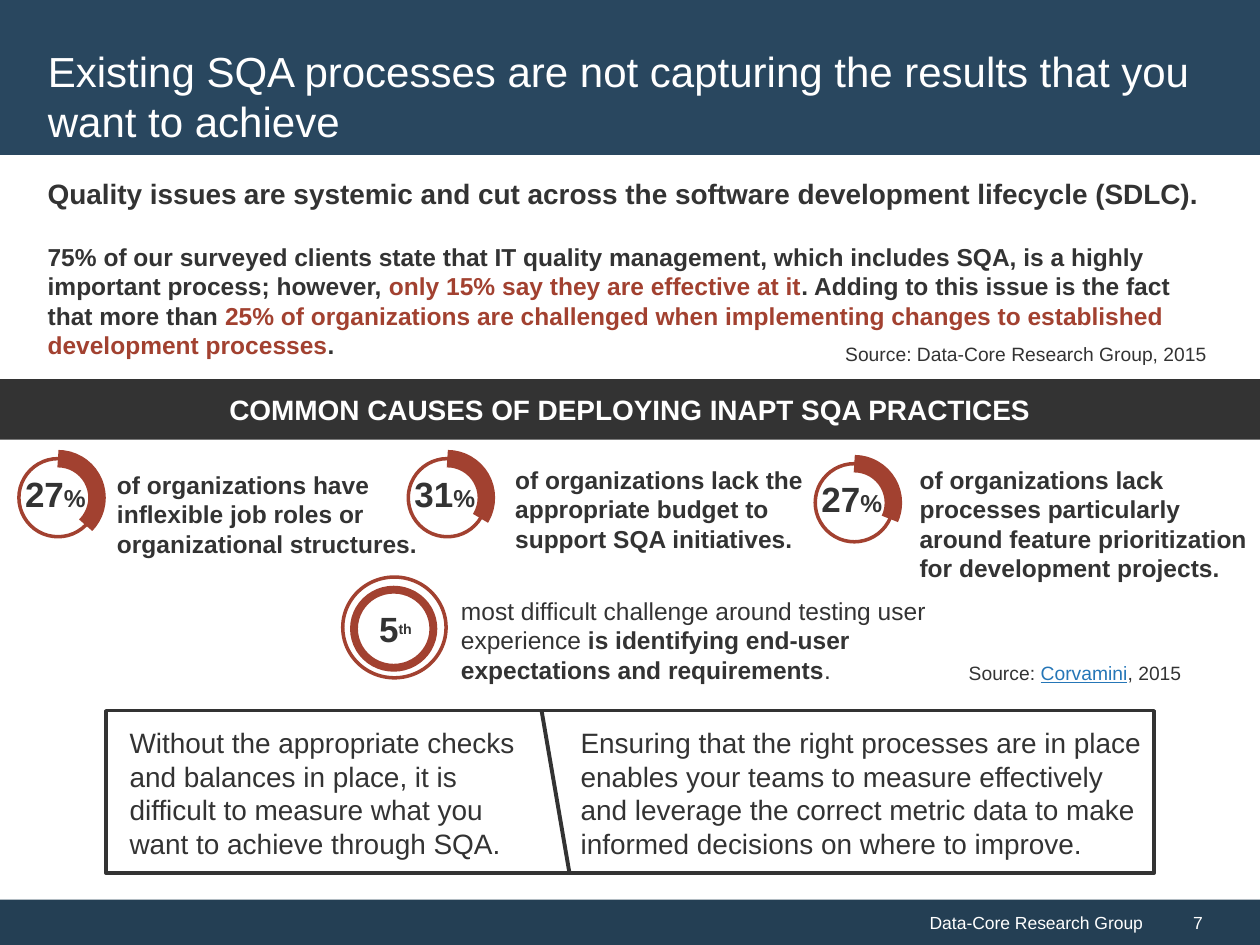
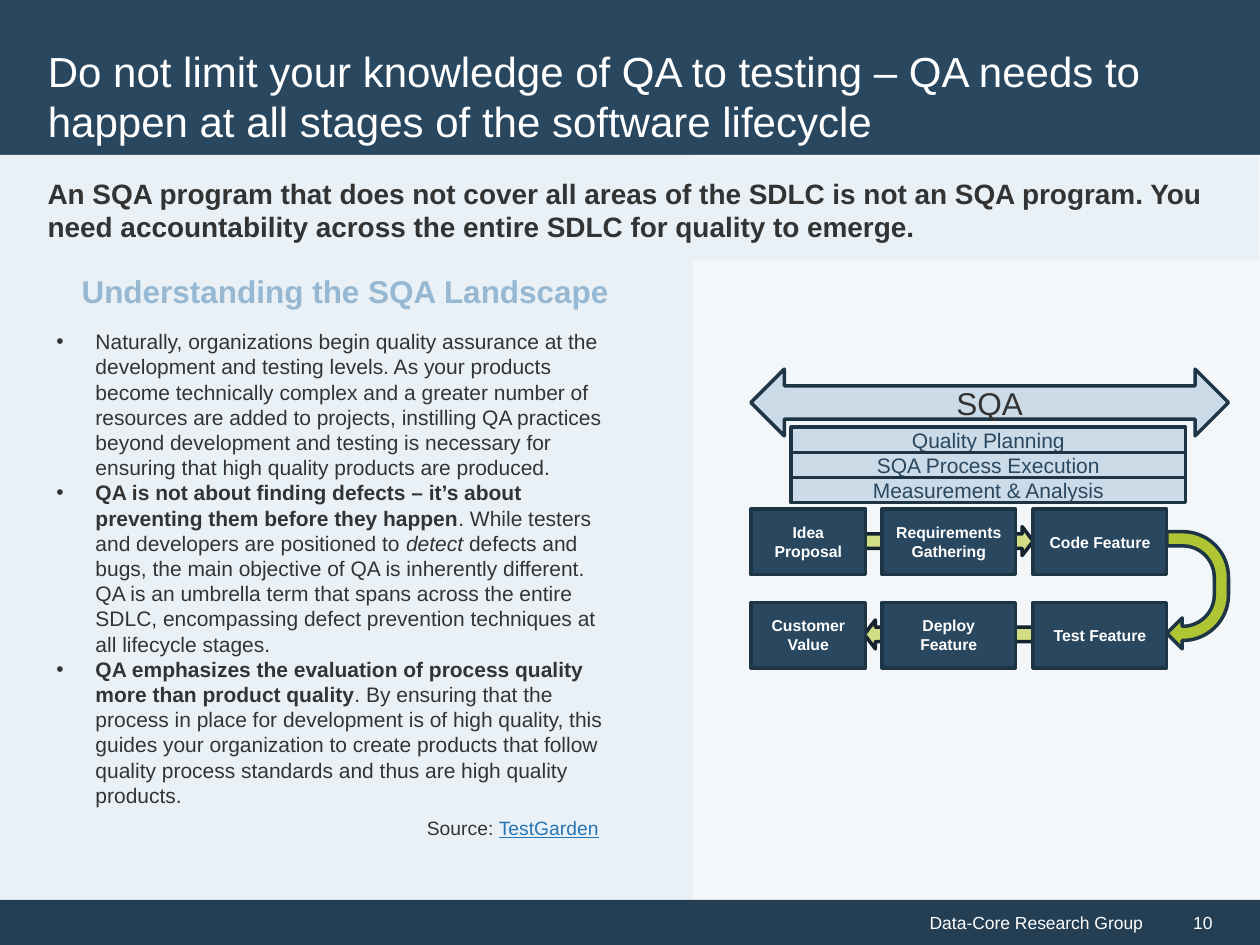
from lxml import etree
from pptx import Presentation
from pptx.dml.color import RGBColor
from pptx.enum.shapes import MSO_CONNECTOR, MSO_SHAPE
from pptx.enum.text import MSO_ANCHOR, MSO_AUTO_SIZE, PP_ALIGN
from pptx.oxml.ns import qn
from pptx.util import Inches, Pt

RECTANGLE = MSO_SHAPE.RECTANGLE
OVAL = MSO_SHAPE.OVAL
ARC = MSO_SHAPE.ARC
PROCESS = MSO_SHAPE.FLOWCHART_PROCESS
RIGHT_ARROW = MSO_SHAPE.RIGHT_ARROW
SPAN_ARROW = MSO_SHAPE.LEFT_RIGHT_ARROW
U_TURN_ARROW = MSO_SHAPE.U_TURN_ARROW
STRAIGHT = MSO_CONNECTOR.STRAIGHT
TOP, MIDDLE = MSO_ANCHOR.TOP, MSO_ANCHOR.MIDDLE
LEFT, CENTER, RIGHT = PP_ALIGN.LEFT, PP_ALIGN.CENTER, PP_ALIGN.RIGHT

WIDTH, HEIGHT = Inches(10), Inches(7.5)
COLUMN, ROW = WIDTH / 100, HEIGHT / 75
FONT = "Arial"
PUBLISHER = "Data-Core Research Group"
COLORS = {
    "white": "FFFFFF", "text": "333333", "band": "29475F", "footer": "243F54",
    "accent": "A24130", "link": "2576B7", "heading": "96B8D2",
    "panel": "F4F7FA", "pale": "EAF1F6", "layer": "CBDBE8", "edge": "1E3546",
    "arrow": "D1DE83", "arrow edge": "15232F", "turn": "B0C534",
}
BOLD, PLAIN, ITALIC = {"bold": True}, {}, {"italic": True}
ACCENT = {"bold": True, "color": "accent"}
LINK = {"color": "link", "underline": True}


def color(name):
    return RGBColor.from_string(COLORS[name])


def place(left, top, width, height):
    return [round(value) for value in
            (left * COLUMN, top * ROW, width * COLUMN, height * ROW)]


def format_span(span, size, ink, style):
    font = span.font
    font.name = FONT
    font.size = Pt(style.get("size", size))
    font.bold = style.get("bold", False)
    font.italic = style.get("italic", False)
    font.underline = style.get("underline", False)
    font.color.rgb = color(style.get("color", ink))
    if "raised" in style:
        span._r.get_or_add_rPr().set("baseline", str(style["raised"] * 1000))


def write(box, paragraphs, size, ink="text", align=LEFT, anchor=TOP):
    frame = box.text_frame
    frame.word_wrap = True
    frame.auto_size = MSO_AUTO_SIZE.NONE
    frame.vertical_anchor = anchor
    for number, spans in enumerate(paragraphs):
        para = frame.add_paragraph() if number else frame.paragraphs[0]
        para.alignment = align
        for text, style in spans:
            span = para.add_run()
            span.text = text
            format_span(span, size, ink, style)
    return box


def add_text(page, at, spans, size, **options):
    return write(page.shapes.add_textbox(*place(*at)), [spans], size, **options)


def add_bullets(page, at, paragraphs, size):
    box = write(page.shapes.add_textbox(*place(*at)), paragraphs, size)
    for para in box.text_frame.paragraphs:
        settings = para._p.get_or_add_pPr()
        settings.set("marL", str(Inches(0.31)))
        settings.set("indent", str(-Inches(0.31)))
        etree.SubElement(settings, qn("a:buFont")).set("typeface", FONT)
        etree.SubElement(settings, qn("a:buChar")).set("char", "•")


def add_shape(page, kind, at, fill=None, line=None, weight=2, turn=0, adjust=()):
    shape = page.shapes.add_shape(kind, *place(*at))
    shape.shadow.inherit = False
    shape.rotation = turn
    for number, value in enumerate(adjust):
        shape.adjustments[number] = value
    if fill:
        shape.fill.solid()
        shape.fill.fore_color.rgb = color(fill)
    else:
        shape.fill.background()
    if line:
        shape.line.color.rgb = color(line)
        shape.line.width = Pt(weight)
    else:
        shape.line.fill.background()
    return shape


def add_label(page, kind, at, text, size, ink, style=PLAIN, align=CENTER, **look):
    shape = add_shape(page, kind, at, **look)
    return write(shape, [[(text, style)]], size, ink, align, MIDDLE)


def add_divider(page, start, end):
    left, top, right, bottom = place(*start, *end)
    connector = page.shapes.add_connector(STRAIGHT, left, top, right, bottom)
    connector.line.color.rgb = color("text")
    connector.line.width = Pt(2.25)
    etree.SubElement(connector._element.spPr, qn("a:effectLst"))


def add_layout_bands(layout, page):
    header = add_shape(page, RECTANGLE, (0, 0, 100, 12.3), "band")
    footer = add_label(page, RECTANGLE, (0, 71.4, 100, 3.7), PUBLISHER, 10, "white",
                       align=RIGHT, fill="footer")
    footer.text_frame.margin_right = Inches(0.93)
    for position, band in enumerate((header, footer), 2):
        layout.shapes.element.insert(position, band.element)


def add_page(deck, title, number):
    layout = deck.slide_layouts[5]
    page = deck.slides.add_slide(layout)
    if len(deck.slides) == 1:
        add_layout_bands(layout, page)
    heading = page.shapes.title
    heading.left, heading.top, heading.width, heading.height = place(2.8, 2.8, 94.3, 9.6)
    write(heading, [[(title, PLAIN)]], 24, "white", anchor=MIDDLE)
    folio = add_text(page, (91.7, 71.4, 8.3, 3.7), [(str(number), PLAIN)], 10,
                     ink="white", anchor=MIDDLE)
    folio.text_frame.margin_left = Inches(0.3)
    return page


def add_share_ring(page, left, top, share, arc_end):
    add_text(page, (left - 0.5, top + 0.6, 8.1, 4.4),
             [(share, BOLD), ("%", {"bold": True, "size": 14})], 20)
    ring = (left, top, 6.2, 6.2)
    add_shape(page, OVAL, ring, line="accent")
    add_shape(page, ARC, ring, line="accent", weight=10, adjust=(162, arc_end))


def add_rank_ring(page):
    add_text(page, (29.1, 47.7, 4.8, 4.4),
             [("5", BOLD), ("th", {"bold": True, "size": 14, "raised": 30})], 20)
    add_shape(page, OVAL, (28.1, 46.8, 6.3, 6.2), line="accent", weight=4.5)
    add_shape(page, OVAL, (27.2, 45.8, 8.2, 8), line="accent")


def build_causes(deck):
    page = add_page(deck, "Existing SQA processes are not capturing the results "
                    "that you want to achieve", 7)
    add_text(page, (2.8, 13.5, 94.3, 3.7), [
        ("Quality issues", BOLD), (" ", {"bold": True, "size": 14}),
        ("are systemic and cut across the software development lifecycle (SDLC).", BOLD),
    ], 16)
    add_text(page, (2.8, 18.7, 94.3, 10.4), [
        ("75% of our surveyed clients state that IT quality management, which includes "
         "SQA, is a highly important process; however, ", BOLD),
        ("only 15% say they are effective at it", ACCENT),
        (". Adding to this issue is the fact that more than ", BOLD),
        ("25% of organizations are challenged when implementing changes to "
         "established development processes", ACCENT),
        (".", BOLD),
    ], 14)
    add_text(page, (66.1, 26.7, 33, 3), [(f"Source: {PUBLISHER}, 2015", PLAIN)], 11)
    add_label(page, RECTANGLE, (0, 30.1, 100, 4.8),
              "COMMON CAUSES OF DEPLOYING INAPT SQA PRACTICES", 16, "white", BOLD,
              fill="text")

    causes = [
        ((1.5, 36.4), "27", 26.86, (8.3, 36.8, 25.9, 8.1),
         "of organizations have inflexible job roles or organizational structures."),
        ((32.4, 36.4), "31", 19.09, (39.9, 36.4, 25.9, 8.1),
         "of organizations lack the appropriate budget to support SQA initiatives."),
        ((64.7, 36.8), "27", 14.64, (72, 36.4, 28.1, 10.4),
         "of organizations lack processes particularly around feature "
         "prioritization for development projects."),
    ]
    for corner, share, arc_end, caption_at, caption in causes:
        add_share_ring(page, *corner, share, arc_end)
        add_text(page, caption_at, [(caption, BOLD)], 14)

    add_rank_ring(page)
    add_text(page, (35.6, 46.8, 41.1, 8.1), [
        ("most difficult challenge around testing user experience ", PLAIN),
        ("is identifying end-user expectations and requirements", BOLD), (".", PLAIN),
    ], 14)
    add_text(page, (75.9, 52, 19.7, 2.8),
             [("Source: ", PLAIN), ("Corvamini", LINK), (", 2015", PLAIN)], 11)

    add_shape(page, RECTANGLE, (8.4, 56.4, 83.2, 12.9), line="text")
    add_divider(page, (43, 56.5), (45.2, 69.3))
    add_text(page, (9.3, 57.1, 34.8, 11.8), [
        ("Without the appropriate checks and balances in place, it is difficult to "
         "measure what you want to achieve through SQA.", PLAIN)], 16)
    add_text(page, (45.1, 57.1, 46.9, 11.8), [
        ("Ensuring that the right processes are in place enables your teams to measure "
         "effectively and leverage the correct metric data to make informed decisions "
         "on where to improve.", PLAIN)], 16)


def add_lifecycle(page):
    columns = [(59.6, 9.1), (70, 10.6), (82, 10.6)]
    rows = [
        (40.4, 0, ["Idea Proposal", "Requirements Gathering", "Code Feature"]),
        (47.8, 180, ["Customer Value", "Deploy Feature", "Test Feature"]),
    ]
    for top, turn, steps in rows:
        add_shape(page, RIGHT_ARROW, (68.6, top + 1.4, 13.4, 2.3), "arrow",
                  "arrow edge", turn=turn, adjust=(0.5, 0.38))
        for (left, width), step in zip(columns, steps):
            add_label(page, RECTANGLE, (left, top, width, 5.2), step, 9, "white",
                      BOLD, fill="band", line="edge")
    add_shape(page, U_TURN_ARROW, (90.4, 44.4, 9.3, 4.9), "turn", "edge", turn=90,
              adjust=(0.23, 0.25, 0.25, 0.74, 1))


def build_landscape(deck):
    page = add_page(deck, "Do not limit your knowledge of QA to testing – QA needs to "
                    "happen at all stages of the software lifecycle", 10)
    add_shape(page, RECTANGLE, (55, 12.3, 45, 59.1), "panel")
    add_shape(page, RECTANGLE, (0, 12.3, 55, 59.1), "pale")
    add_shape(page, RECTANGLE, (0, 12.4, 99.9, 8.2), "pale")
    add_text(page, (2.8, 13.5, 94.3, 6.4), [
        ("An SQA program that does not cover all areas of the SDLC is not an SQA "
         "program. You need accountability across the entire SDLC for quality to "
         "emerge.", BOLD)], 16)
    add_text(page, (2.8, 21.1, 49.2, 4), [("Understanding the SQA Landscape", BOLD)], 18,
             ink="heading", align=CENTER)
    add_bullets(page, (3.5, 25.6, 46.7, 39.4), [
        [("Naturally, organizations begin quality assurance at the development and "
          "testing levels. As your products become technically complex and a greater "
          "number of resources are added to projects, instilling QA practices beyond "
          "development and testing is necessary for ensuring that high quality products "
          "are produced.", PLAIN)],
        [("QA is not about finding defects – it’s about preventing them before they "
          "happen", BOLD),
         (". While testers and developers are positioned to ", PLAIN),
         ("detect", ITALIC),
         (" defects and bugs, the main objective of QA is inherently different. QA is an "
          "umbrella term that spans across the entire SDLC, encompassing defect "
          "prevention techniques at all lifecycle stages.", PLAIN)],
        [("QA emphasizes the evaluation of process quality more than product quality",
          BOLD),
         (". By ensuring that the process in place for development is of high quality, "
          "this guides your organization to create products that follow quality process "
          "standards and thus are high quality products.", PLAIN)],
    ], 12)
    add_text(page, (32.9, 64.3, 20.4, 2.8),
             [("Source: ", PLAIN), ("TestGarden", LINK)], 11)

    add_lifecycle(page)
    add_label(page, SPAN_ARROW, (59.6, 29.3, 37.9, 5.3), "SQA", 18, "text",
              fill="layer", line="edge")
    layers = ["Quality Planning", "SQA Process Execution", "Measurement & Analysis"]
    for number, layer in enumerate(layers):
        add_label(page, PROCESS, (62.8, 33.9 + 2 * number, 31.3, 2), layer, 12, "band",
                  fill="layer", line="edge")


def main():
    deck = Presentation()
    deck.slide_width, deck.slide_height = WIDTH, HEIGHT
    build_causes(deck)
    build_landscape(deck)
    deck.save("out.pptx")


if __name__ == "__main__":
    main()
